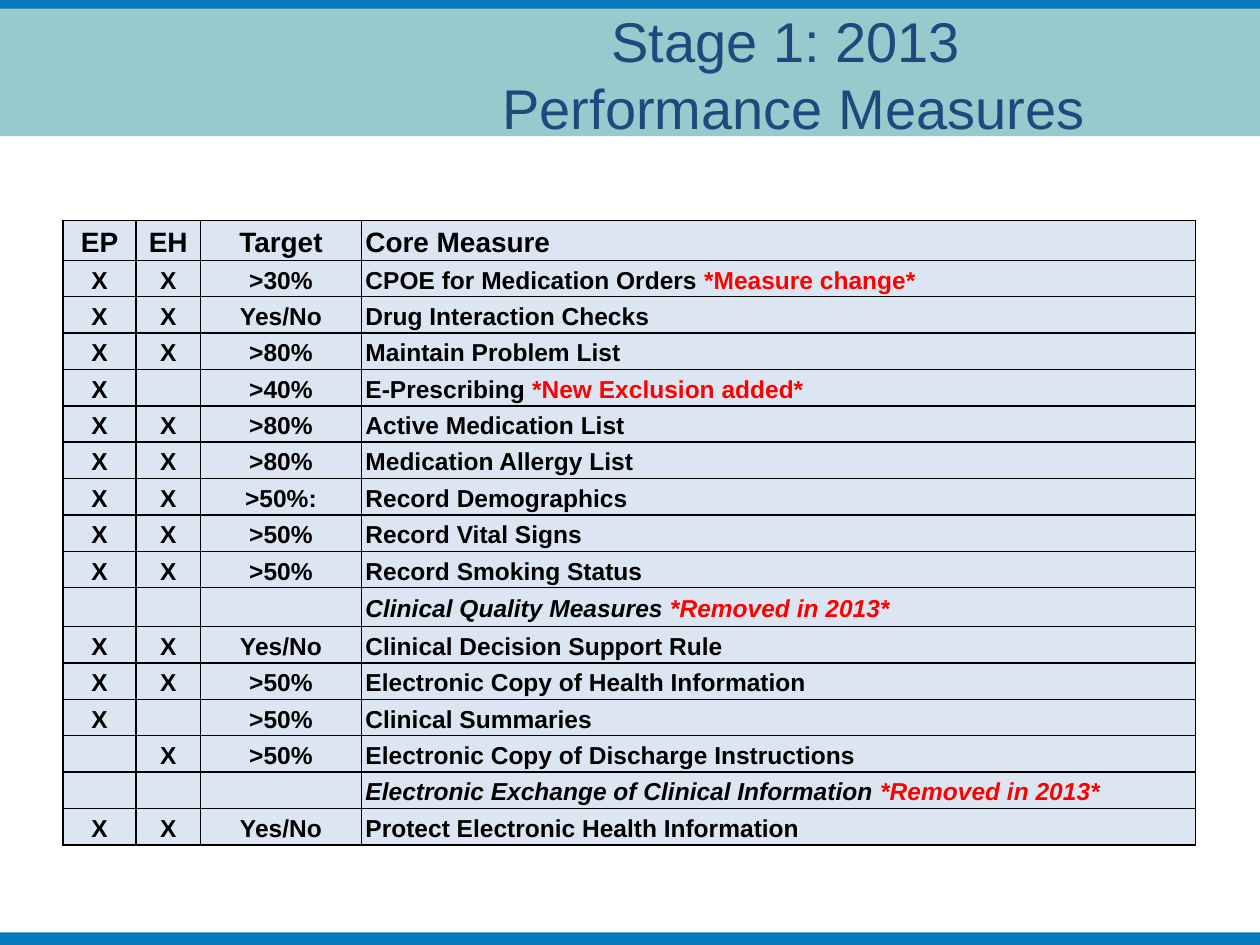
from dataclasses import dataclass

from lxml.etree import SubElement
from pptx import Presentation
from pptx.dml.color import RGBColor
from pptx.enum.shapes import MSO_SHAPE
from pptx.enum.text import MSO_ANCHOR, PP_ALIGN
from pptx.oxml.ns import qn
from pptx.util import Pt


@dataclass(frozen=True)
class Theme:
    font: str = "Arial"
    blue: str = "027ABB"
    teal: str = "98C9CD"
    title: str = "1F497D"
    cell: str = "DCE6F2"
    text: str = "000000"
    note: str = "FF0000"
    title_size: float = 32
    header_size: float = 16
    body_size: float = 14


THEME = Theme()
REMOVED = "*Removed in 2013*"
COLUMN_WIDTHS = (41.8, 36.7, 92.2, 476.6)
HEADER_HEIGHT, ROW_HEIGHT, QUALITY_ROW_HEIGHT = 22.8, 20.8, 22.3
QUALITY_ROW = 10

MEASURES = [
    ("EP", "EH", "Target", "Core Measure", ""),
    ("X", "X", ">30%", "CPOE for Medication Orders ", "*Measure change*"),
    ("X", "X", "Yes/No", "Drug Interaction Checks", ""),
    ("X", "X", ">80%", "Maintain Problem List", ""),
    ("X", "", ">40%", "E-Prescribing ", "*New Exclusion added*"),
    ("X", "X", ">80%", "Active Medication List", ""),
    ("X", "X", ">80%", "Medication Allergy List", ""),
    ("X", "X", ">50%:", "Record Demographics", ""),
    ("X", "X", ">50%", "Record Vital Signs", ""),
    ("X", "X", ">50%", "Record Smoking Status", ""),
    ("", "", "", "Clinical Quality Measures ", REMOVED),
    ("X", "X", "Yes/No", "Clinical Decision Support Rule", ""),
    ("X", "X", ">50%", "Electronic Copy of Health Information", ""),
    ("X", "", ">50%", "Clinical Summaries", ""),
    ("", "X", ">50%", "Electronic Copy of Discharge Instructions", ""),
    ("", "", "", "Electronic Exchange of Clinical Information ", REMOVED),
    ("X", "X", "Yes/No", "Protect Electronic Health Information", ""),
]


def add_text(paragraph, text, *, size, color, bold=False, italic=False):
    run = paragraph.add_run()
    run.text = text
    font = run.font
    font.name = THEME.font
    font.size = Pt(size)
    font.bold = bold
    font.italic = italic
    font.color.rgb = RGBColor.from_string(color)


def add_bar(slide, top, height, color):
    bar = slide.shapes.add_shape(MSO_SHAPE.RECTANGLE, Pt(0), Pt(top), Pt(720), Pt(height))
    bar.shadow.inherit = False
    bar.fill.solid()
    bar.fill.fore_color.rgb = RGBColor.from_string(color)
    bar.line.fill.background()


def add_title(slide, lines):
    title = slide.shapes.title
    title.left, title.top, title.width, title.height = Pt(187.2), Pt(6.5), Pt(532.8), Pt(71.3)
    title.text_frame.vertical_anchor = MSO_ANCHOR.MIDDLE
    paragraph = title.text_frame.paragraphs[0]
    paragraph.alignment = PP_ALIGN.CENTER
    for index, line in enumerate(lines):
        if index:
            paragraph.add_line_break()
        add_text(paragraph, line, size=THEME.title_size, color=THEME.title)
    title.element.getparent().append(title.element)


def add_borders(cell):
    properties = cell._tc.get_or_add_tcPr()
    for position, side in enumerate(("a:lnL", "a:lnR", "a:lnT", "a:lnB")):
        line = properties.makeelement(qn(side), {"w": str(Pt(1))})
        fill = SubElement(line, qn("a:solidFill"))
        SubElement(fill, qn("a:srgbClr"), val=THEME.text)
        properties.insert(position, line)


def format_cell(cell, alignment, size):
    cell.fill.solid()
    cell.fill.fore_color.rgb = RGBColor.from_string(THEME.cell)
    add_borders(cell)
    cell.vertical_anchor = MSO_ANCHOR.MIDDLE
    cell.margin_left = cell.margin_right = Pt(2.2)
    cell.margin_top = cell.margin_bottom = Pt(1.1)
    paragraph = cell.text_frame.paragraphs[0]
    paragraph.alignment = alignment
    paragraph.line_spacing = 1.15
    SubElement(paragraph._p, qn("a:endParaRPr"), sz=str(int(size * 100)))
    return paragraph


def add_measure_table(slide):
    heights = [ROW_HEIGHT] * len(MEASURES)
    heights[0] = HEADER_HEIGHT
    heights[QUALITY_ROW] = QUALITY_ROW_HEIGHT
    frame = slide.shapes.add_table(
        len(MEASURES), len(COLUMN_WIDTHS), Pt(36), Pt(126),
        Pt(sum(COLUMN_WIDTHS)), Pt(sum(heights)),
    )
    table = frame.table
    table.first_row = table.horz_banding = False
    for column, width in zip(table.columns, COLUMN_WIDTHS):
        column.width = Pt(width)
    for row_index, (*values, note) in enumerate(MEASURES):
        table.rows[row_index].height = Pt(heights[row_index])
        size = THEME.body_size if row_index else THEME.header_size
        italic = note == REMOVED
        for column_index, value in enumerate(values):
            is_measure = column_index == len(values) - 1
            alignment = PP_ALIGN.LEFT if is_measure else PP_ALIGN.CENTER
            paragraph = format_cell(table.cell(row_index, column_index), alignment, size)
            if value:
                add_text(paragraph, value, size=size, color=THEME.text, bold=True, italic=italic)
            if is_measure and note:
                add_text(paragraph, note, size=size, color=THEME.note, bold=True, italic=italic)


def main():
    presentation = Presentation()
    presentation.slide_width, presentation.slide_height = Pt(720), Pt(540)
    slide = presentation.slides.add_slide(presentation.slide_layouts[5])
    add_bar(slide, -0.7, 18.7, THEME.blue)
    add_bar(slide, 5, 72.8, THEME.teal)
    add_bar(slide, 532.8, 7.2, THEME.blue)
    add_title(slide, ("Stage 1: 2013 ", "Performance Measures"))
    add_measure_table(slide)
    presentation.save("out.pptx")


if __name__ == "__main__":
    main()
